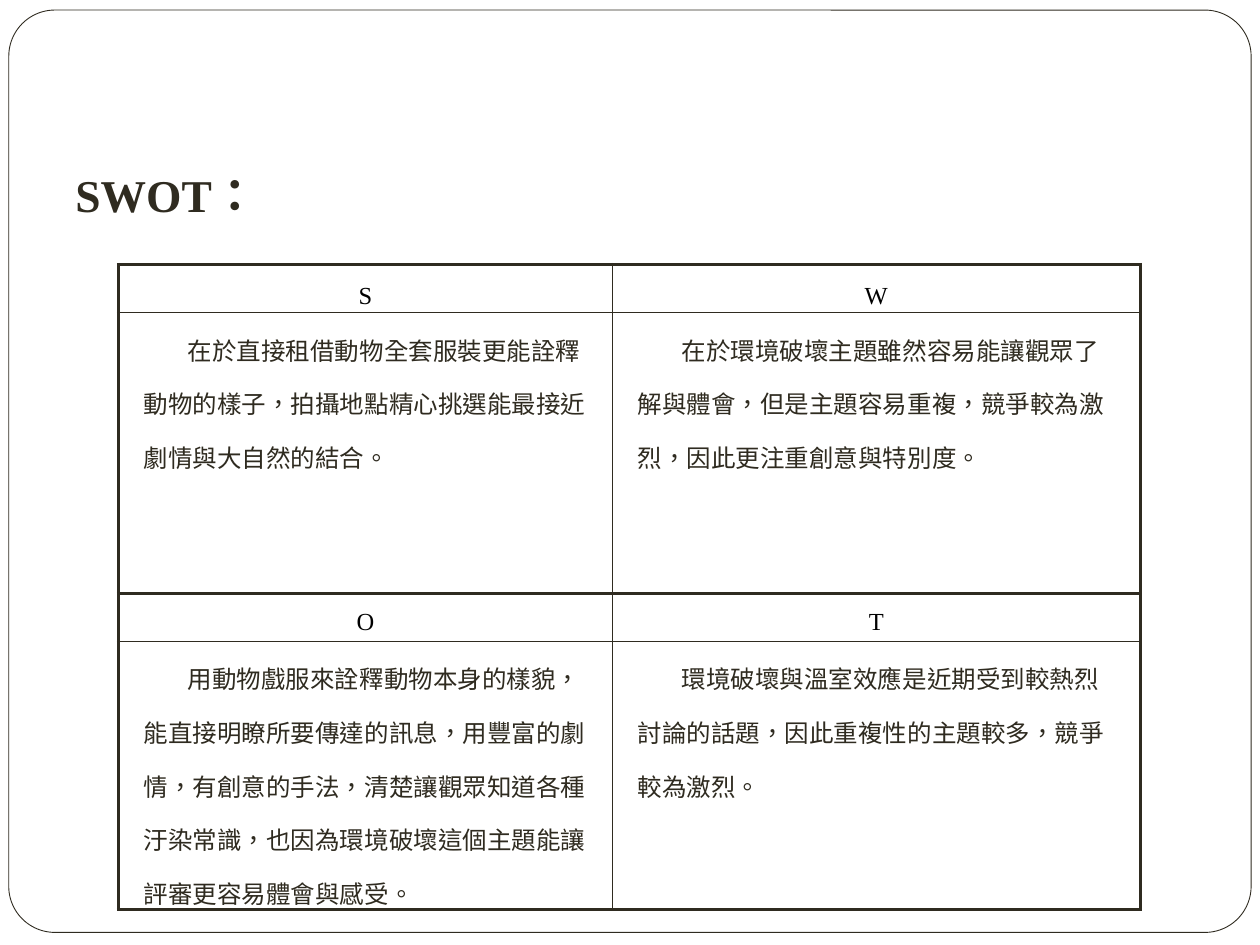
from dataclasses import dataclass

from lxml.etree import SubElement
from pptx import Presentation
from pptx.dml.color import RGBColor
from pptx.enum.lang import MSO_LANGUAGE_ID as Lang
from pptx.enum.shapes import MSO_SHAPE as Shape
from pptx.enum.text import MSO_ANCHOR as Anchor, PP_ALIGN as Align
from pptx.oxml.ns import qn
from pptx.util import Inches, Pt


@dataclass(frozen=True)
class Theme:
    ink: RGBColor = RGBColor(0x2F, 0x2B, 0x20)
    black: RGBColor = RGBColor(0, 0, 0)
    white: RGBColor = RGBColor(255, 255, 255)
    font: str = "Times New Roman"
    title: int = 26
    body: int = 14
    thick: float = 2.25
    thin: float = 1


theme = Theme()


def write(para, text, size, color, bold=False):
    run = para.add_run()
    run.text = text
    run.font.language_id = Lang.TRADITIONAL_CHINESE
    font = para.font
    font.name, font.size, font.bold = theme.font, Pt(size), bold
    font.color.rgb = color


def edge(cell, side, width):
    props = cell._tc.get_or_add_tcPr()
    line = SubElement(props, qn(f"a:ln{side}"), w=str(Pt(width)))
    fill = SubElement(line, qn("a:solidFill"))
    SubElement(fill, qn("a:srgbClr"), val=str(theme.ink))


deck = Presentation()
deck.slide_width, deck.slide_height = Inches(10), Inches(7.5)
slide = deck.slides.add_slide(deck.slide_layouts[6])

# Rounded frame
frame = slide.shapes.add_shape(
    Shape.ROUNDED_RECTANGLE, Inches(0.07), Inches(0.08), Inches(9.86), Inches(7.32))
frame.adjustments[0] = 0.05
frame.shadow.inherit = False
frame.fill.solid()
frame.fill.fore_color.rgb = theme.white
frame.line.color.rgb = theme.ink
frame.line.width = Pt(0.5)

# Title
title = slide.shapes.add_textbox(Inches(0.5), Inches(1.28), Inches(9), Inches(0.6))
title.text_frame.word_wrap = True
para = title.text_frame.paragraphs[0]
para.space_before = Pt(5.8)
write(para, "SWOT：", theme.title, theme.ink, bold=True)

# SWOT table: heading rows alternate with text rows
rows = [
    ("S", "W"),
    ("在於直接租借動物全套服裝更能詮釋動物的樣子，拍攝地點精心挑選能最接近劇情與大自然的結合。",
     "在於環境破壞主題雖然容易能讓觀眾了解與體會，但是主題容易重複，競爭較為激烈，因此更注重創意與特別度。"),
    ("O", "T"),
    ("用動物戲服來詮釋動物本身的樣貌，能直接明瞭所要傳達的訊息，用豐富的劇情，有創意的手法，"
     "清楚讓觀眾知道各種汙染常識，也因為環境破壞這個主題能讓評審更容易體會與感受。",
     "環境破壞與溫室效應是近期受到較熱烈討論的話題，因此重複性的主題較多，競爭較為激烈。"),
]
widths = [3.92, 4.19]
heights = [0.38, 2.23, 0.38, 2.13]
table = slide.shapes.add_table(
    len(rows), len(widths), Inches(0.94), Inches(2.1),
    Inches(sum(widths)), Inches(sum(heights))).table
table.first_row = table.horz_banding = False
for col, width in zip(table.columns, widths):
    col.width = Inches(width)

for r, texts in enumerate(rows):
    table.rows[r].height = Inches(heights[r])
    head = r % 2 == 0
    for c, text in enumerate(texts):
        cell = table.cell(r, c)
        cell.margin_left = cell.margin_right = Inches(0.01 if head else 0.2)
        cell.margin_top, cell.margin_bottom = Inches(0.01), 0
        cell.vertical_anchor = Anchor.MIDDLE if r == 0 else Anchor.TOP

        # Thick lines surround each heading and text pair
        thick = {"L": c == 0, "R": c == 1, "T": head, "B": not head}
        for side, heavy in thick.items():
            edge(cell, side, theme.thick if heavy else theme.thin)
        cell.fill.background()

        para = cell.text_frame.paragraphs[0]
        para.line_spacing = 1.5
        if head:
            para.alignment = Align.CENTER
        else:
            para._p.get_or_add_pPr().set("indent", str(Inches(0.35)))
        write(para, text, theme.body, theme.black if head else theme.ink)

deck.save("out.pptx")
